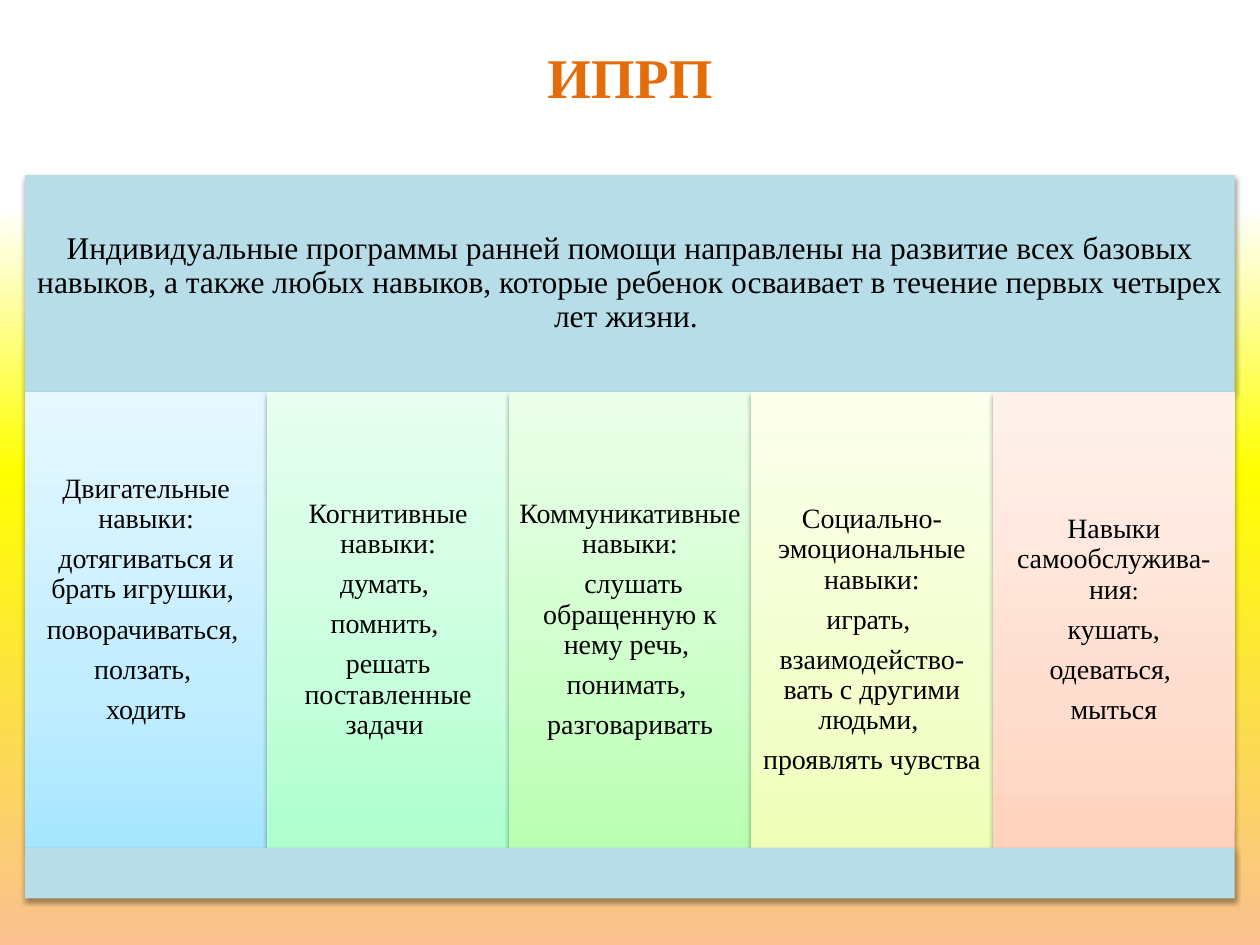
from dataclasses import dataclass

from lxml import etree
from pptx import Presentation
from pptx.dml.color import RGBColor
from pptx.enum.shapes import MSO_SHAPE
from pptx.enum.text import MSO_ANCHOR, PP_ALIGN
from pptx.oxml.ns import qn
from pptx.util import Inches, Pt

RECT = MSO_SHAPE.RECTANGLE
MIDDLE = MSO_ANCHOR.MIDDLE
CENTER = PP_ALIGN.CENTER


@dataclass(frozen=True)
class Theme:
    font: str = "Times New Roman"
    title_size: int = 32
    intro_size: int = 18
    skill_size: int = 16
    colon_size: int = 14
    title_color: str = "E46C0A"
    text_color: str = "000000"
    band_color: str = "B7DEE8"
    # Gradient stops: position %, colour, opacity %
    backdrop: tuple = ((22, "FFFFFF", 50), (50, "FFFF00", 100), (100, "FAC090", 100))
    inset: float = 0.07


# Grid in inches: five equal columns, three stacked rows
LEFT, COLUMN = 0.2, 1.92
ROW_TOPS = (1.39, 3.11, 6.73, 7.13)
LINE_SHIFT = 0.32  # extra inset that moves a column's text by half a line

INTRO = ("Индивидуальные программы ранней помощи направлены на развитие всех "
         "базовых навыков, а также любых навыков, которые ребенок осваивает "
         "в течение первых четырех лет жизни. ")

# Each skill: gradient colours, extra insets, lines
SKILLS = (
    (("A7E6FF", "C1EDFF", "E7F8FF"), {"margin_bottom": LINE_SHIFT},
     ("Двигательные навыки:", "дотягиваться и брать игрушки, ",
      "поворачиваться, ", "ползать, ", "ходить")),
    (("ADFFCD", "C5FFDB", "E9FFF1"), {},
     ("Когнитивные навыки:", "думать, ", "помнить, ",
      "решать поставленные задачи ")),
    (("B9FFB2", "CDFFC9", "ECFFEA"), {},
     ("Коммуникативные навыки:", " слушать обращенную к нему речь, ",
      "понимать, ", "разговаривать")),
    (("F0FFB8", "F4FFCD", "FBFFEC"), {"margin_top": LINE_SHIFT},
     ("Социально-эмоциональные навыки:", "играть, ",
      "взаимодейство-вать с другими людьми, ", "проявлять чувства")),
    (("FFD2BD", "FFDED0", "FFF2ED"), {},
     (("Навыки самообслужива-ния", ":"), " кушать, ", "одеваться, ", "мыться")),
)


def apply(target, **values):
    for name, value in values.items():
        setattr(target, name, value)


class SkillSlide:
    def __init__(self, deck, theme):
        self.theme = theme
        self.slide = deck.slides.add_slide(deck.slide_layouts[5])

    def style(self, font, size, color, bold=False):
        apply(font, name=self.theme.font, size=Pt(size), bold=bold)
        font.color.rgb = RGBColor.from_string(color)

    def gradient(self, fill, stops, angle):
        fill.gradient()
        fill.gradient_angle = angle
        stop_list = fill.gradient_stops[0]._gs.getparent()
        for old in list(stop_list):
            stop_list.remove(old)
        for position, color, opacity in stops:
            stop = etree.SubElement(stop_list, qn("a:gs"), pos=str(position * 1000))
            tint = etree.SubElement(stop, qn("a:srgbClr"), val=color)
            if opacity < 100:
                etree.SubElement(tint, qn("a:alpha"), val=str(opacity * 1000))

    def shadow(self, shape):
        shape.shadow.inherit = False
        effects = shape._element.spPr.find(qn("a:effectLst"))
        outer = etree.SubElement(effects, qn("a:outerShdw"), blurRad=str(Pt(3.1)),
                                 dist=str(Pt(1.6)), dir="5400000", rotWithShape="0")
        black = etree.SubElement(outer, qn("a:srgbClr"), val="000000")
        etree.SubElement(black, qn("a:alpha"), val="38000")

    def backdrop(self):
        # Counter-clockwise 270 degrees runs from top to bottom
        self.gradient(self.slide.background.fill, self.theme.backdrop, 270)

    def title(self, text):
        heading = self.slide.shapes.title
        apply(heading, left=Inches(0.5), top=Inches(0.21),
              width=Inches(9), height=Inches(0.79))
        heading.text_frame.vertical_anchor = MIDDLE
        paragraph = heading.text_frame.paragraphs[0]
        paragraph.alignment = CENTER
        run = paragraph.add_run()
        run.text = text
        self.style(run.font, self.theme.title_size, self.theme.title_color, True)

    def panel(self, row, column=0, span=1, colors=None):
        top, bottom = ROW_TOPS[row:row + 2]
        panel = self.slide.shapes.add_shape(
            RECT, Inches(LEFT + column * COLUMN), Inches(top),
            Inches(span * COLUMN), Inches(bottom - top))
        if colors:
            stops = [(pos, color, 100) for pos, color in zip((0, 35, 100), colors)]
            self.gradient(panel.fill, stops, 90)
        else:
            panel.fill.solid()
            panel.fill.fore_color.rgb = RGBColor.from_string(self.theme.band_color)
        panel.line.fill.background()
        self.shadow(panel)
        return panel

    def caption(self, panel, lines, size, extra_insets=None):
        frame = panel.text_frame
        apply(frame, word_wrap=True, vertical_anchor=MIDDLE)
        for side in ("left", "top", "right", "bottom"):
            name = f"margin_{side}"
            extra = (extra_insets or {}).get(name, 0)
            setattr(frame, name, Inches(self.theme.inset + extra))
        for index, line in enumerate(lines):
            paragraph = frame.add_paragraph() if index else frame.paragraphs[0]
            apply(paragraph, alignment=CENTER, line_spacing=0.9,
                  space_after=Pt(0.35 * size))
            for part in (line,) if isinstance(line, str) else line:
                run = paragraph.add_run()
                run.text = part
                part_size = self.theme.colon_size if part == ":" else size
                self.style(run.font, part_size, self.theme.text_color)


def main():
    deck = Presentation()
    apply(deck, slide_width=Inches(10), slide_height=Inches(7.5))
    theme = Theme()
    page = SkillSlide(deck, theme)
    page.backdrop()
    page.title("ИПРП")

    # Introduction band
    intro = page.panel(row=0, span=len(SKILLS))
    page.caption(intro, [INTRO], theme.intro_size)

    # Skill columns
    for column, (colors, extra_insets, lines) in enumerate(SKILLS):
        skill = page.panel(row=1, column=column, colors=colors)
        page.caption(skill, lines, theme.skill_size, extra_insets)

    # Closing band
    page.panel(row=2, span=len(SKILLS))
    deck.save("out.pptx")


if __name__ == "__main__":
    main()
